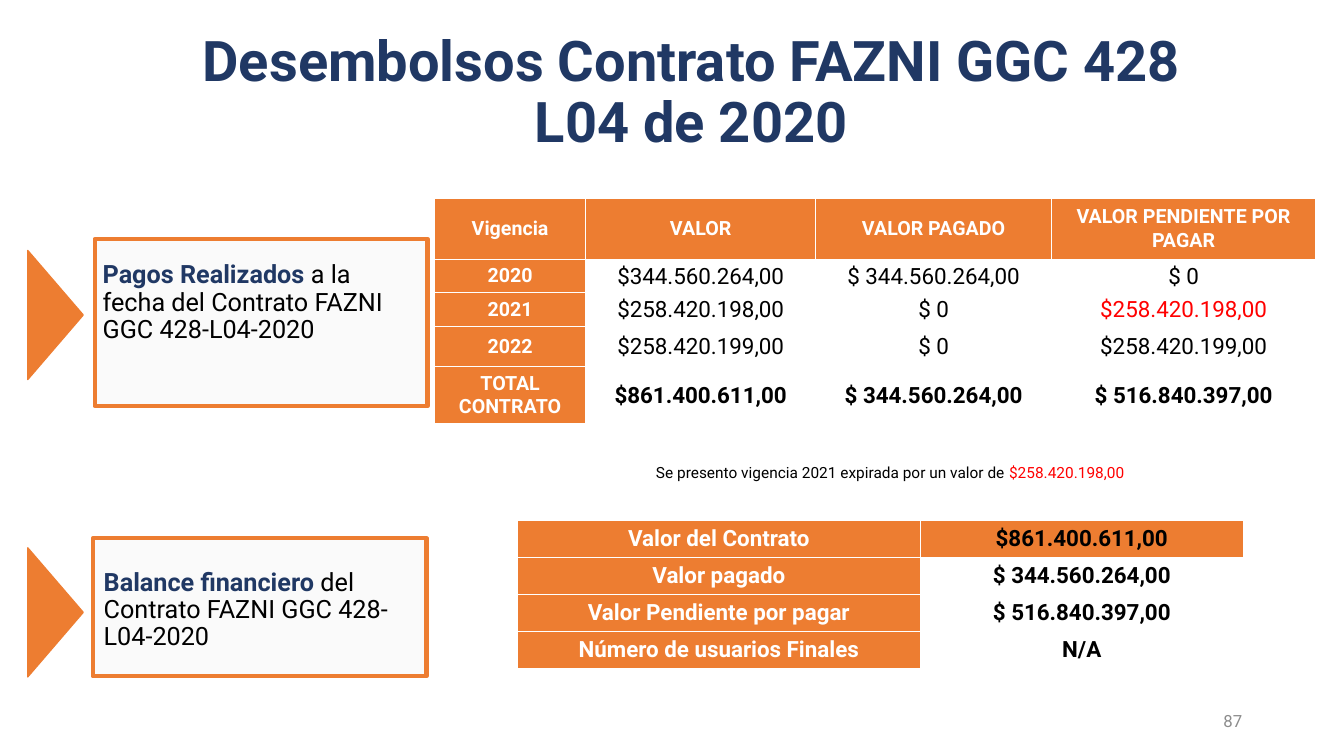
import pptx
import pptx.util
import pptx.dml.color
import pptx.enum.shapes
import pptx.enum.text
import pptx.oxml
import pptx.oxml.ns
import lxml.etree

PX = 9144
HUES = {"navy": "203864", "orange": "ED7D31", "pale": "F2F2F2", "black": "000000",
        "white": "FFFFFF", "red": "FF0000", "gray": "8C8C8C"}
RGB = {name: pptx.dml.color.RGBColor.from_string(code) for name, code in HUES.items()}
ALIGN = pptx.enum.text.PP_ALIGN
ANCHOR = pptx.enum.text.MSO_ANCHOR
SHAPE = pptx.enum.shapes.MSO_SHAPE
qn = pptx.oxml.ns.qn


def write(frame, align, size, *runs):
    frame.word_wrap = True
    para = frame.paragraphs[0]
    para.alignment = align
    for text, hue, bold in runs:
        run = para.add_run()
        run.text = text
        run.font.name = "Roboto"
        run.font.size = pptx.util.Pt(size)
        run.font.bold = bold
        run.font.color.rgb = RGB[hue]
    return para


def grid(place, cols, rows):
    frame = slide.shapes.add_table(len(rows), len(cols), *[n * PX for n in place])
    table = frame.table
    table.first_row = table.horz_banding = False
    for col, wide in zip(table.columns, cols):
        col.width = wide * PX
    for row, high in zip(table.rows, rows):
        row.height = high * PX
    for cell in table.iter_cells():
        cell.vertical_anchor = ANCHOR.MIDDLE
        props = cell._tc.get_or_add_tcPr()
        for side in ("lnL", "lnR", "lnT", "lnB"):
            edge = lxml.etree.SubElement(props, qn("a:" + side), w="9525")
            fill = lxml.etree.SubElement(edge, qn("a:solidFill"))
            lxml.etree.SubElement(fill, qn("a:srgbClr"), val=HUES["white"])
        cell.fill.background()
    return table


deck = pptx.Presentation()
deck.slide_width = 1333 * PX
deck.slide_height = 750 * PX
slide = deck.slides.add_slide(deck.slide_layouts[5])

title = slide.shapes.title
title.left, title.top, title.width, title.height = [n * PX for n in (189, 66, 993, 92)]
title.text_frame.vertical_anchor = ANCHOR.BOTTOM
title.text_frame.auto_size = pptx.enum.text.MSO_AUTO_SIZE.NONE
para = write(title.text_frame, ALIGN.CENTER, 40,
             ("Desembolsos Contrato FAZNI GGC 428 L04 de 2020", "navy", True))
para.line_spacing = 0.9

panels = [
    ((94, 237, 330, 166), (92, 256, 326, 128), 285,
     "Pagos Realizados ", "a la fecha del Contrato FAZNI GGC 428-L04-2020"),
    ((92, 534, 331, 137), (93, 561, 328, 97), 580,
     "Balance financiero ", "del Contrato FAZNI GGC 428-L04-2020"),
]
for place, area, top, lead, rest in panels:
    panel = slide.shapes.add_shape(SHAPE.RECTANGLE, *[n * PX for n in place])
    panel.shadow.inherit = False
    panel.fill.solid()
    panel.fill.fore_color.rgb = RGB["pale"]
    tint = panel._element.spPr.find(qn("a:solidFill"))[0]
    lxml.etree.SubElement(tint, qn("a:alpha"), val="38000")
    panel.line.color.rgb = RGB["orange"]
    panel.line.width = pptx.util.Pt(3)

    label = slide.shapes.add_textbox(*[n * PX for n in area])
    label.text_frame.margin_top = 4 * PX
    para = write(label.text_frame, ALIGN.LEFT, 18,
                 (lead, "navy", True), (rest, "black", False))
    para.line_spacing = 0.9

    arrow = slide.shapes.add_shape(SHAPE.ISOSCELES_TRIANGLE,
                                   -9 * PX, top * PX, 128 * PX, 55 * PX)
    arrow.rotation = 90
    arrow.shadow.inherit = False
    arrow.fill.solid()
    arrow.fill.fore_color.rgb = RGB["orange"]
    arrow.line.color.rgb = RGB["orange"]
    arrow.line.width = pptx.util.Pt(1)

number = slide.shapes.add_textbox(942 * PX, 695 * PX, 300 * PX, 40 * PX)
number.text_frame.vertical_anchor = ANCHOR.MIDDLE
write(number.text_frame, ALIGN.RIGHT, 12, ("87", "gray", False))

years = [
    ["Vigencia", "VALOR", "VALOR PAGADO", "VALOR PENDIENTE POR PAGAR"],
    ["2020", "$344.560.264,00", "$ 344.560.264,00", "$ 0"],
    ["2021", "$258.420.198,00", "$ 0", "$258.420.198,00"],
    ["2022", "$258.420.199,00", "$ 0", "$258.420.199,00"],
    ["TOTAL CONTRATO", "$861.400.611,00", "$ 344.560.264,00", "$ 516.840.397,00"],
]
totals = [
    ["Valor del Contrato", "$861.400.611,00"],
    ["Valor pagado", "$ 344.560.264,00"],
    ["Valor Pendiente por pagar", "$ 516.840.397,00"],
    ["Número de usuarios Finales", "N/A"],
]
tables = [
    (years, (431, 197, 874, 222), [150, 228, 234, 262], [60, 33, 33, 40, 56], 14),
    (totals, (513, 516, 720, 144), [400, 320], [36] * 4, 16),
]
for data, place, cols, rows, size in tables:
    table = grid(place, cols, rows)
    for r, row in enumerate(data):
        for c, text in enumerate(row):
            cell = table.cell(r, c)
            head = c == 0 or (r == 0 and data is years)
            if head or r == 0:
                cell.fill.solid()
                cell.fill.fore_color.rgb = RGB["orange"]
            else:
                cell.margin_left = cell.margin_right = cell.margin_top = PX
                cell.margin_bottom = 0
            late = data is years and (r, c) == (2, 3)
            hue = "white" if head else "red" if late else "black"
            bold = head or data is totals or r == len(data) - 1
            write(cell.text_frame, ALIGN.CENTER, size if head else 16, (text, hue, bold))

note = slide.shapes.add_textbox(511 * PX, 455 * PX, 744 * PX, 47 * PX)
write(note.text_frame, ALIGN.CENTER, 11,
      ("Se presento vigencia 2021 expirada por un valor de ", "black", False),
      ("$258.420.198,00", "red", False))

deck.save("out.pptx")
